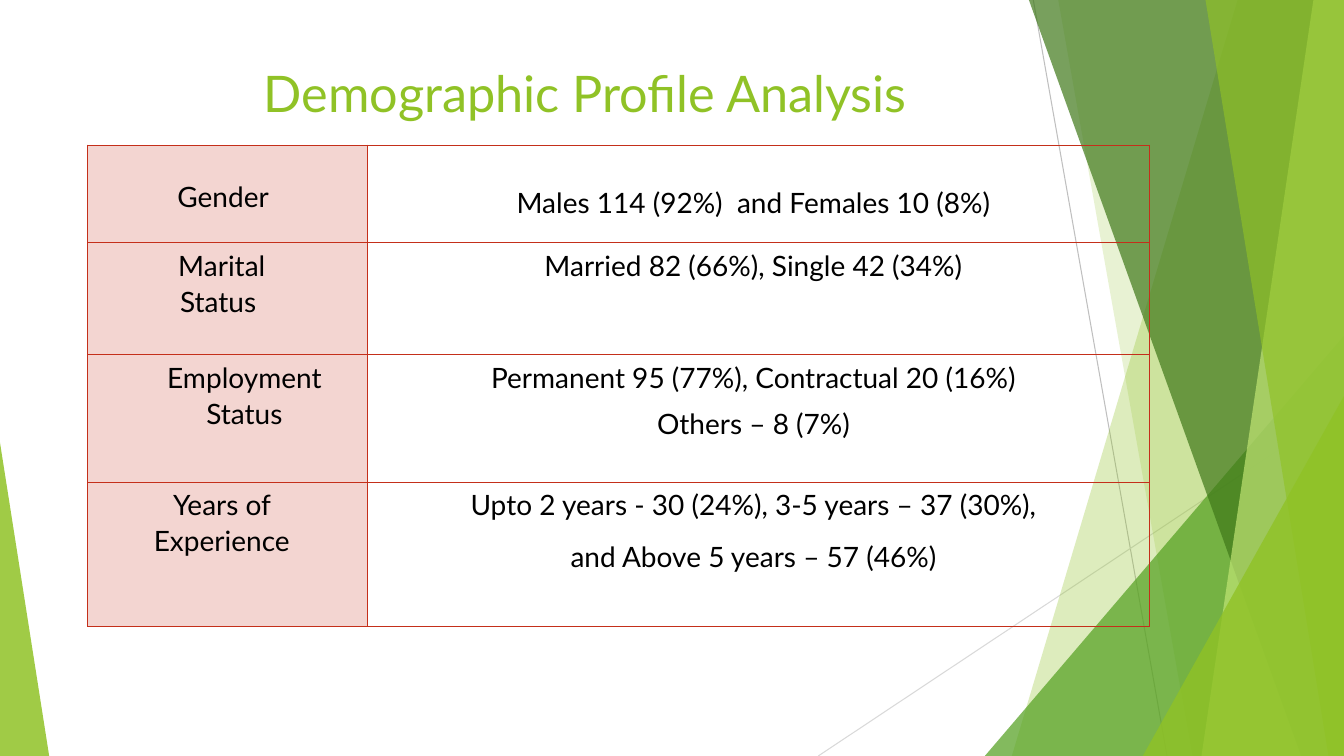
from collections import namedtuple
from lxml import etree
from pptx import Presentation
from pptx import util as u
from pptx.dml.color import RGBColor
from pptx.enum import shapes, text
from pptx.oxml.ns import qn

Theme = namedtuple("Theme", "lime leaf moss pale red ink dim mist font head body")
look = Theme("90C226", "54A021", "3F7819", "C0E474", "C42F1A", "000000",
             "BFBFBF", "D9D9D9", "Lato", 36, 20)
WIDE, HIGH = 33.87, 19.05


def tint(fill, node, color, alpha):
    fill.solid()
    fill.fore_color.rgb = RGBColor.from_string(color)
    mark = next(node.iter(qn("a:srgbClr")))
    etree.SubElement(mark, qn("a:alpha"), val=str(alpha * 1000))


def write(para, words, size, color):
    run = para.add_run()
    run.text = words
    run.font.name = look.font
    run.font.size = u.Pt(size)
    run.font.bold = False
    run.font.color.rgb = RGBColor.from_string(color)


deck = Presentation()
deck.slide_width, deck.slide_height = u.Cm(WIDE), u.Cm(HIGH)
slide = deck.slides.add_slide(deck.slide_layouts[5])

for x1, y1, x2, y2, color in [(26.04, 0, 29.41, HIGH, look.dim),
                              (WIDE, 10.24, 20.62, HIGH, look.mist)]:
    line = slide.shapes.add_connector(
        shapes.MSO_CONNECTOR.STRAIGHT, u.Cm(x1), u.Cm(y1), u.Cm(x2), u.Cm(y2))
    line.line.width = u.Pt(0.75)
    line.line.color.rgb = RGBColor.from_string(color)
    etree.SubElement(line.element.spPr, qn("a:effectLst"))

bands = [
    (31.19, 25.5, 0, look.lime, 30),
    (26.67, 30.05, 0, look.lime, 20),
    (WIDE, 24.82, 8.46, look.leaf, 72),
    (25.93, 32.79, 0, look.moss, 70),
    (33.1, 30.28, 0, look.pale, 70),
    (30.38, 33.48, 0, look.lime, 65),
    (WIDE, 28.8, 9.98, look.lime, 80),
    (0, 0, 11.15, look.lime, 85),
]
for tip, foot, top, color, alpha in bands:
    if top:
        wide = WIDE - foot if tip else 1.24
        band = slide.shapes.add_shape(
            shapes.MSO_SHAPE.ISOSCELES_TRIANGLE,
            u.Cm(foot), u.Cm(top), u.Cm(wide), u.Cm(HIGH - top))
        band.adjustments[0] = 1 if tip else 0
    else:
        pen = slide.shapes.build_freeform(u.Cm(tip), 0)
        pen.add_line_segments([(u.Cm(x), u.Cm(y)) for x, y in
                               [(WIDE, 0), (WIDE, HIGH), (foot, HIGH)]])
        band = pen.convert_to_shape()
    tint(band.fill, band.element.spPr, color, alpha)
    band.line.fill.background()
    band.shadow.inherit = False

title = slide.shapes.title
title.left, title.top = u.Cm(2.97), u.Cm(1.45)
title.width, title.height = u.Cm(23.88), u.Cm(3.66)
frame = title.text_frame
frame.word_wrap = True
frame.auto_size = text.MSO_AUTO_SIZE.NONE
frame.vertical_anchor = text.MSO_ANCHOR.TOP
para = frame.paragraphs[0]
para.alignment = text.PP_ALIGN.CENTER
write(para, "Demographic Profile Analysis ", look.head, look.lime)

rows = [
    (2.46, "Gender", 1.7, ["Males 114 (92%)  and Females 10 (8%)"], 0),
    (2.82, "Marital Status ", 1.7, ["Married 82 (66%), Single 42 (34%)"], 0),
    (3.22, "Employment Status", 0.56,
     ["Permanent 95 (77%), Contractual 20 (16%)", "Others – 8 (7%)"], 7.5),
    (3.63, "Years of Experience", 1.7,
     ["Upto 2 years - 30 (24%), 3-5 years – 37 (30%),",
      "and Above 5 years – 57 (46%)"], 11.3),
]
cols = [7.06, 19.69]
grid = slide.shapes.add_table(
    len(rows), len(cols), u.Cm(2.21), u.Cm(3.66), u.Cm(sum(cols)),
    u.Cm(sum(row[0] for row in rows))).table
grid.first_row = grid.horz_banding = False
for col, wide in zip(grid.columns, cols):
    col.width = u.Cm(wide)

for r, (high, label, edge, facts, gap) in enumerate(rows):
    grid.rows[r].height = u.Cm(high)
    for c, (lines, right) in enumerate([([label], edge), (facts, 1.65)]):
        cell = grid.cell(r, c)
        cell.margin_left, cell.margin_right = u.Cm(1.4), u.Cm(right)
        cell.margin_top, cell.margin_bottom = u.Cm(0.08), 0
        cell.vertical_anchor = text.MSO_ANCHOR.TOP
        props = cell._tc.get_or_add_tcPr()
        if c == 0:
            tint(cell.fill, props, look.red, 20)
        else:
            cell.fill.background()
        for i, side in enumerate(["lnL", "lnR", "lnT", "lnB"]):
            rule = etree.Element(qn("a:" + side), w=str(u.Pt(1)))
            solid = etree.SubElement(rule, qn("a:solidFill"))
            etree.SubElement(solid, qn("a:srgbClr"), val=look.red)
            props.insert(i, rule)
        for i, words in enumerate(lines):
            frame = cell.text_frame
            para = frame.add_paragraph() if i else frame.paragraphs[0]
            para.alignment = text.PP_ALIGN.CENTER
            para.line_spacing = 1.07
            para.space_after = u.Pt(gap)
            write(para, words, look.body, look.ink)

gender, males = grid.cell(0, 0), grid.cell(0, 1)
gender.vertical_anchor = text.MSO_ANCHOR.MIDDLE
gender.margin_left = u.Cm(2.26)
gender.text_frame.paragraphs[0].alignment = text.PP_ALIGN.LEFT
males.margin_top = u.Cm(0.95)

deck.save("out.pptx")
